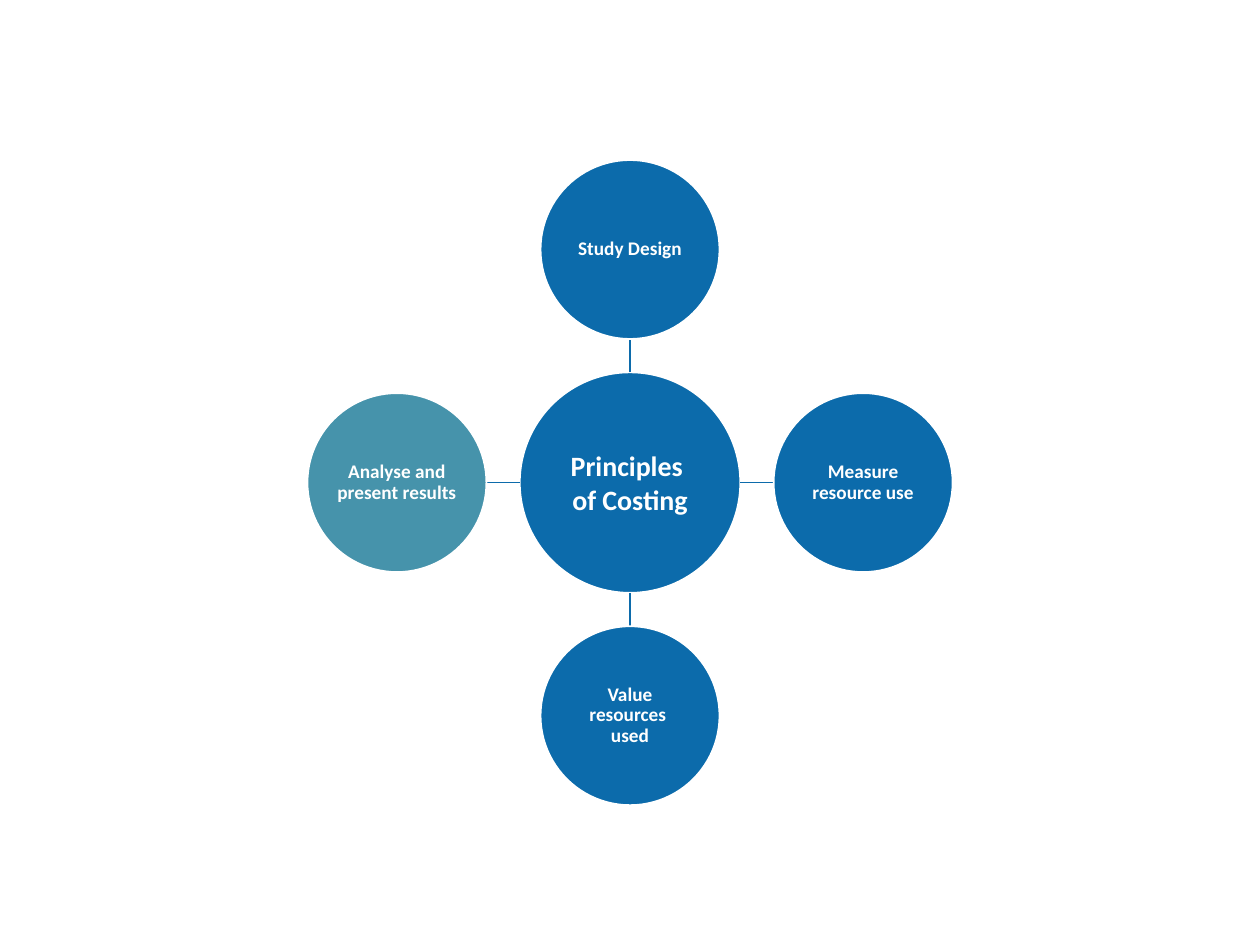
from dataclasses import dataclass

from pptx import Presentation
from pptx import util as u
from pptx.dml.color import RGBColor
from pptx.enum import shapes, text
from pptx.oxml.ns import qn
from lxml import etree


@dataclass(frozen=True)
class Theme:
    blue: RGBColor = RGBColor.from_string("0C6BAB")
    teal: RGBColor = RGBColor.from_string("4693AB")
    white: RGBColor = RGBColor.from_string("FFFFFF")
    font: str = "Calibri"
    hub_size: int = 16
    step_size: int = 11
    line: int = 1


theme = Theme()


def write(box, words, *, size, spacing):
    frame = box.text_frame
    frame.word_wrap = True
    frame.vertical_anchor = text.MSO_ANCHOR.MIDDLE
    frame.margin_left = frame.margin_right = u.Inches(0.01)
    frame.margin_top = frame.margin_bottom = u.Inches(0.01)
    para = frame.paragraphs[0]
    para.text = words
    para.alignment = text.PP_ALIGN.CENTER
    para.line_spacing = spacing
    for span in para.runs:
        span.font.name = theme.font
        span.font.size = u.Pt(size)
        span.font.bold = True
        span.font.color.rgb = theme.white


def add_circle(page, x, y, diameter, color):
    circle = page.shapes.add_shape(
        shapes.MSO_SHAPE.OVAL,
        u.Inches(x - diameter / 2), u.Inches(y - diameter / 2),
        u.Inches(diameter), u.Inches(diameter))
    circle.shadow.inherit = False
    circle.fill.solid()
    circle.fill.fore_color.rgb = color
    circle.line.color.rgb = theme.white
    circle.line.width = u.Pt(theme.line)
    return circle


deck = Presentation()
deck.slide_width = u.Inches(10)
deck.slide_height = u.Inches(7.5)
page = deck.slides.add_slide(deck.slide_layouts[6])

center_x, center_y = 5, 3.83
hub_diameter, step_diameter = 1.75, 1.42
reach = 1.85
spoke_start = hub_diameter / 2
spoke_end = reach - step_diameter / 2

hub = add_circle(page, center_x, center_y, hub_diameter, theme.blue)
write(hub, "Principles \vof Costing", size=theme.hub_size, spacing=1.0)

steps = [
    ("Study Design", 0, -1, theme.blue),
    ("Measure resource use", 1, 0, theme.blue),
    ("Value resources \vused", 0, 1, theme.blue),
    ("Analyse and present results", -1, 0, theme.teal),
]

for words, dx, dy, color in steps:
    spoke = page.shapes.add_connector(
        shapes.MSO_CONNECTOR.STRAIGHT,
        u.Inches(center_x + dx * spoke_start), u.Inches(center_y + dy * spoke_start),
        u.Inches(center_x + dx * spoke_end), u.Inches(center_y + dy * spoke_end))
    spoke.line.color.rgb = theme.blue
    spoke.line.width = u.Pt(theme.line)
    etree.SubElement(spoke._element.spPr, qn("a:effectLst"))

    step = add_circle(page, center_x + dx * reach, center_y + dy * reach,
                      step_diameter, color)
    write(step, words, size=theme.step_size, spacing=0.9)

deck.save("out.pptx")
